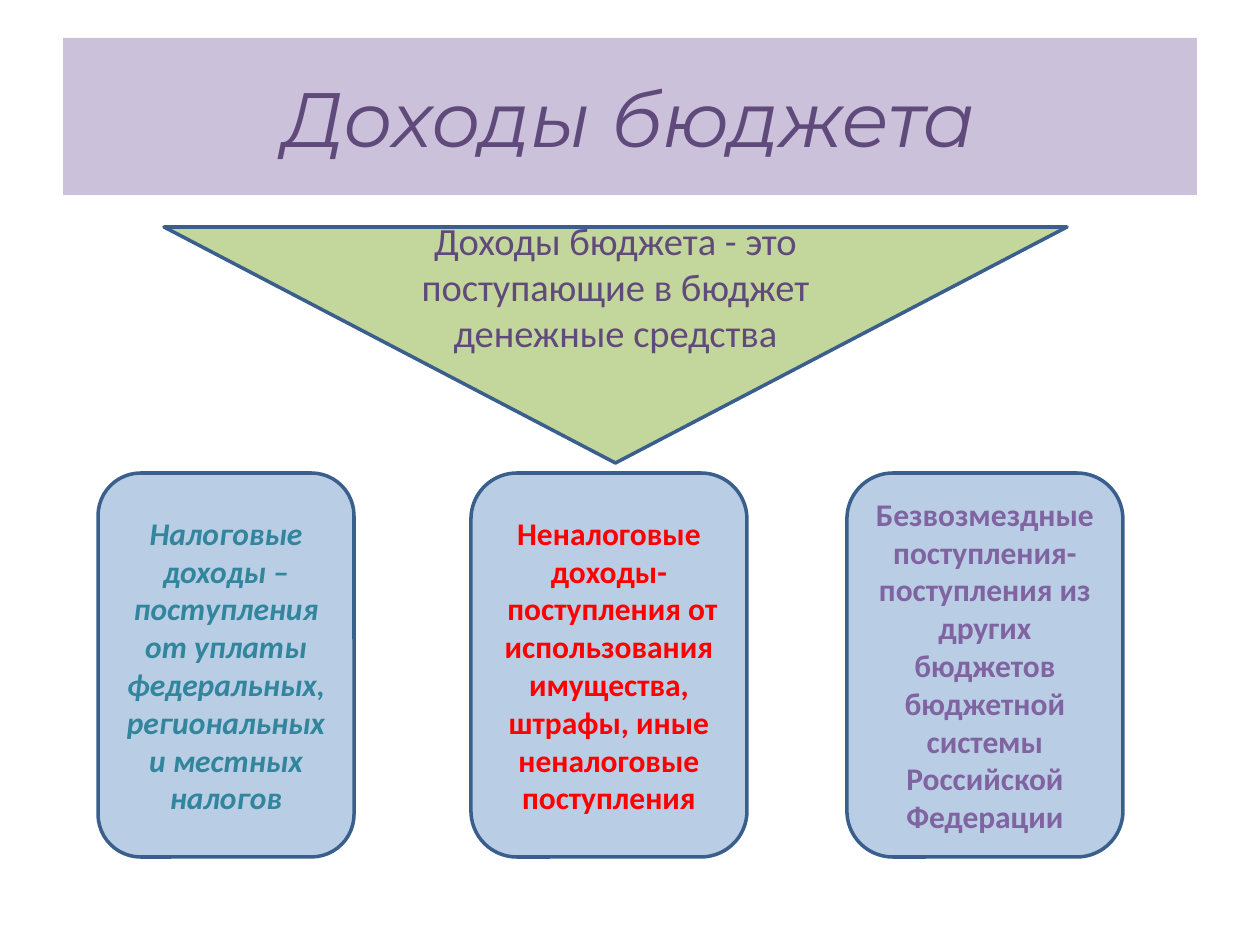
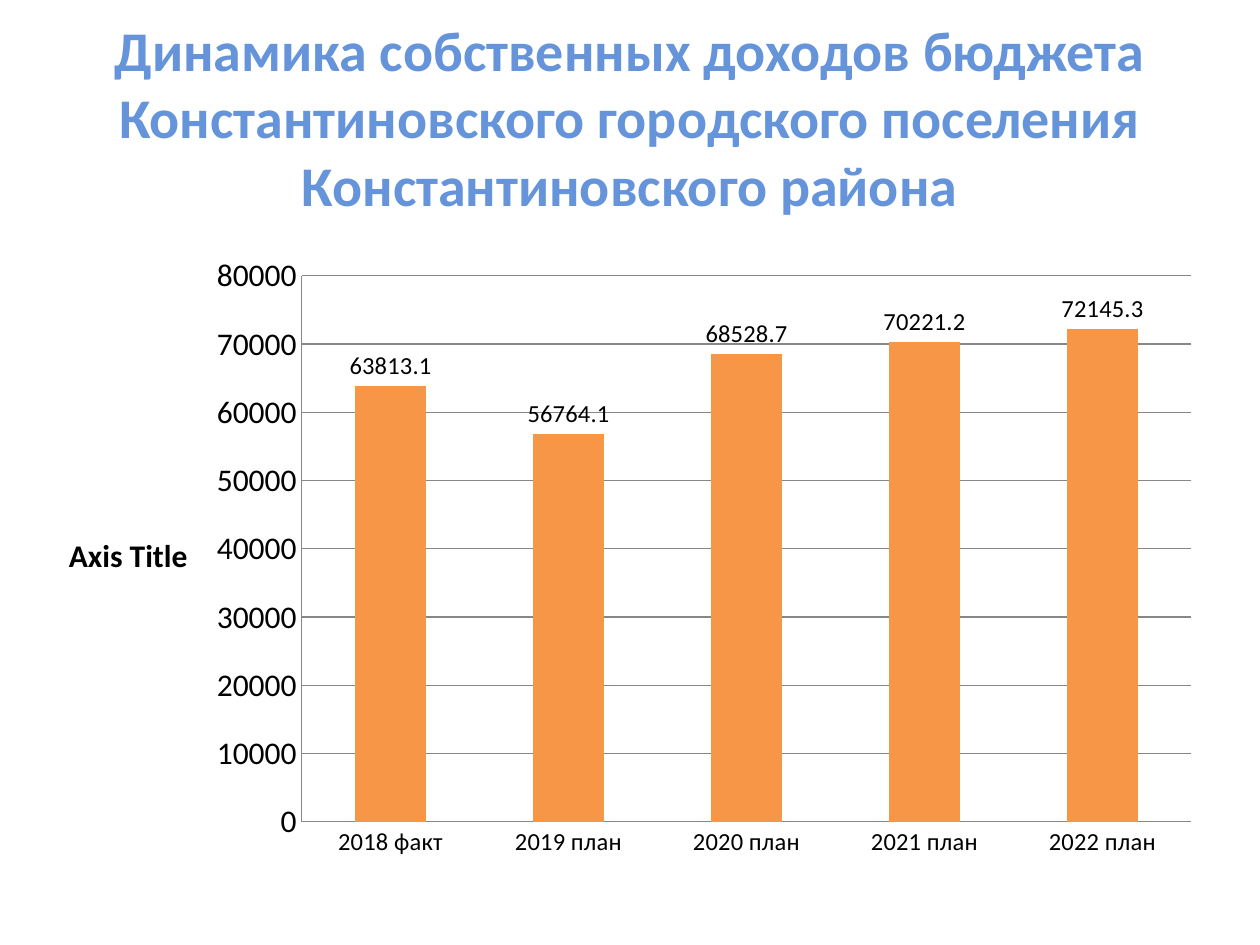
from lxml import etree
from pptx import Presentation
from pptx.chart.data import CategoryChartData
from pptx.dml.color import RGBColor
from pptx.enum.chart import XL_CHART_TYPE as CHART, XL_LABEL_POSITION as LABEL, XL_TICK_MARK as TICK
from pptx.enum.shapes import MSO_SHAPE as SHAPE
from pptx.enum.text import MSO_ANCHOR as ANCHOR, MSO_AUTO_SIZE as AUTOSIZE, PP_ALIGN as ALIGN
from pptx.oxml.ns import qn
from pptx.util import Emu, Pt

PX_PER_INCH = 126
FONT = "Calibri"
TITLE_FONT = "Montserrat"

BLACK = RGBColor(0x00, 0x00, 0x00)
GREY = RGBColor(0x87, 0x87, 0x87)
OUTLINE = RGBColor(0x3A, 0x5F, 0x8C)
LILAC = RGBColor(0xCC, 0xC1, 0xDA)
DARK_PURPLE = RGBColor(0x60, 0x4A, 0x7B)
PURPLE = RGBColor(0x80, 0x64, 0xA2)
GREEN = RGBColor(0xC3, 0xD6, 0x9B)
PALE_BLUE = RGBColor(0xB9, 0xCD, 0xE5)
TEAL = RGBColor(0x31, 0x85, 0x9C)
RED = RGBColor(0xFF, 0x00, 0x00)
SKY = RGBColor(0x65, 0x94, 0xDA)
ORANGE = RGBColor(0xF7, 0x96, 0x46)

TITLE_BOX = (63, 38, 1134, 157)
CARD_TOP, CARD_HEIGHT = 473, 384

INCOME_CARDS = [
    (98, 256, TEAL, True,
     ["Налоговые доходы –поступления от уплаты федеральных, региональных и местных налогов"]),
    (471, 276, RED, False,
     ["Неналоговые доходы-",
      " поступления от использования имущества, штрафы, иные неналоговые поступления"]),
    (847, 276, PURPLE, False,
     ["Безвозмездные поступления-",
      "поступления из других бюджетов бюджетной системы Российской Федерации"]),
]

OWN_INCOME = {
    "2018 факт": 63813.1,
    "2019 план": 56764.1,
    "2020 план": 68528.7,
    "2021 план": 70221.2,
    "2022 план": 72145.3,
}


def px(n):
    return Emu(round(n * 914400 / PX_PER_INCH))


def style_font(font, size, color=BLACK, bold=False, italic=False, name=FONT):
    font.name = name
    font.size = Pt(size)
    font.bold = bold
    font.italic = italic
    font.color.rgb = color


def write(tf, paragraphs, size, color, **style):
    tf.word_wrap = True
    tf.auto_size = AUTOSIZE.NONE
    tf.vertical_anchor = ANCHOR.MIDDLE
    for i, text in enumerate(paragraphs):
        p = tf.add_paragraph() if i else tf.paragraphs[0]
        p.alignment = ALIGN.CENTER
        r = p.add_run()
        r.text = text
        style_font(r.font, size, color, **style)


def add_titled_slide(prs, text, size, color, **style):
    s = prs.slides.add_slide(prs.slide_layouts[5])
    title = s.shapes.title
    title.left, title.top, title.width, title.height = map(px, TITLE_BOX)
    write(title.text_frame, [text], size, color, **style)
    return s


def add_block(s, kind, box, fill, paragraphs, size, color, **style):
    sp = s.shapes.add_shape(kind, *map(px, box))
    sp.shadow.inherit = False
    sp.fill.solid()
    sp.fill.fore_color.rgb = fill
    sp.line.color.rgb = OUTLINE
    sp.line.width = Pt(2)
    write(sp.text_frame, paragraphs, size, color, **style)


def place_plot(chart, **fractions):
    area = chart._chartSpace.chart.plotArea
    for old in area.findall(qn("c:layout")):
        area.remove(old)
    layout = etree.Element(qn("c:layout"))
    manual = etree.SubElement(layout, qn("c:manualLayout"))
    settings = {"layoutTarget": "inner", "xMode": "edge", "yMode": "edge", **fractions}
    for tag, value in settings.items():
        etree.SubElement(manual, qn(f"c:{tag}")).set("val", str(value))
    area.insert(0, layout)


def style_axis(axis, size):
    axis.major_tick_mark = axis.minor_tick_mark = TICK.NONE
    axis.format.line.color.rgb = GREY
    style_font(axis.tick_labels.font, size)


def add_axis_title(axis, text):
    tf = axis.axis_title.text_frame
    r = tf.paragraphs[0].add_run()
    r.text = text
    style_font(r.font, 18, bold=True)
    body = tf._txBody.find(qn("a:bodyPr"))
    body.set("rot", "0")
    body.set("vert", "horz")


def add_column_chart(s, box, values):
    data = CategoryChartData()
    data.categories = list(values)
    data.add_series("Series 1", list(values.values()))
    chart = s.shapes.add_chart(CHART.COLUMN_CLUSTERED, *map(px, box), data).chart
    chart.has_title = False
    chart.has_legend = False
    style_font(chart.font, 18)
    place_plot(chart, x=0.22, y=0.05, w=0.76, h=0.86)

    plot = chart.plots[0]
    plot.vary_by_categories = False
    plot.gap_width = 150
    bars = plot.series[0].format.fill
    bars.solid()
    bars.fore_color.rgb = ORANGE
    plot.has_data_labels = True
    labels = plot.data_labels
    labels.show_value = True
    labels.position = LABEL.OUTSIDE_END
    style_font(labels.font, 14)

    style_axis(chart.category_axis, 14)
    amounts = chart.value_axis
    style_axis(amounts, 18)
    amounts.minimum_scale, amounts.maximum_scale, amounts.major_unit = 0, 80000, 10000
    amounts.major_gridlines.format.line.color.rgb = GREY
    add_axis_title(amounts, "Axis Title")


def build_income_slide(prs):
    s = add_titled_slide(prs, "Доходы бюджета", 44, DARK_PURPLE, italic=True, name=TITLE_FONT)
    s.shapes.title.fill.solid()
    s.shapes.title.fill.fore_color.rgb = LILAC
    add_block(s, SHAPE.FLOWCHART_MERGE, (164, 227, 903, 236), GREEN,
              ["Доходы бюджета - это поступающие в бюджет денежные средства"], 22, DARK_PURPLE)
    for left, width, color, italic, paragraphs in INCOME_CARDS:
        add_block(s, SHAPE.FLOWCHART_ALTERNATE_PROCESS, (left, CARD_TOP, width, CARD_HEIGHT),
                  PALE_BLUE, paragraphs, 18, color, bold=True, italic=italic)


def build_dynamics_slide(prs):
    s = add_titled_slide(
        prs,
        "Динамика собственных доходов бюджета Константиновского городского поселения "
        "Константиновского района",
        32, SKY, bold=True)
    add_column_chart(s, (44, 244, 1171, 635), OWN_INCOME)


def main():
    prs = Presentation()
    prs.slide_width, prs.slide_height = px(1260), px(945)
    build_income_slide(prs)
    build_dynamics_slide(prs)
    prs.save("out.pptx")


if __name__ == "__main__":
    main()
